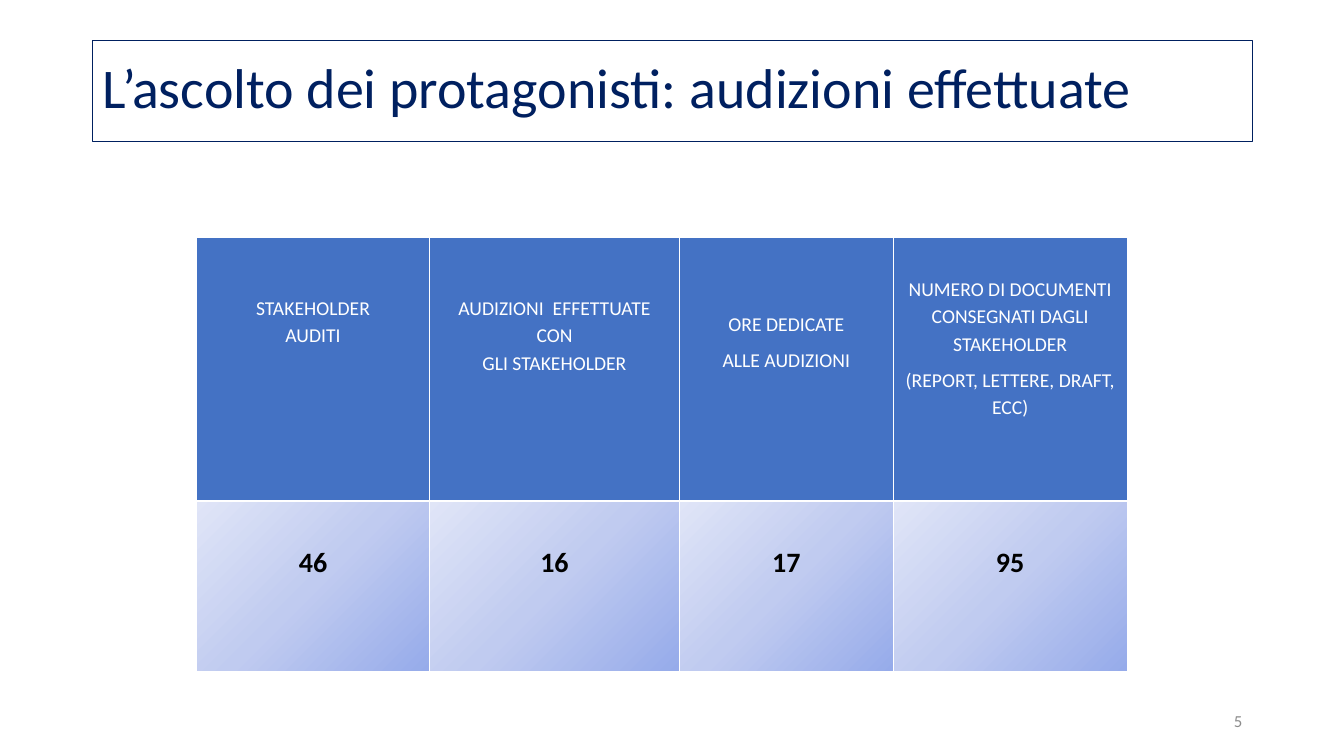
from lxml import etree
from pptx import Presentation
from pptx import util as u
from pptx.dml.color import RGBColor
from pptx.enum import text
from pptx.oxml import parse_xml
from pptx.oxml.ns import nsdecls

W, H = 13.33, 7.5
FONT, NAVY, BLUE, WHITE, GREY = "Calibri", "002060", "4472C4", "FFFFFF", "8C8C8C"
LINE = 1.15

TITLE = "L’ascolto dei protagonisti: audizioni effettuate"
PAGE = "5"
# header lines, space before each paragraph (pt), top inset (in), value, column width (in)
COLUMNS = [
    (["STAKEHOLDER", "AUDITI"], 0, 0.55, "46", 2.31),
    (["AUDIZIONI  EFFETTUATE", "CON", "GLI STAKEHOLDER"], 0, 0.55, "16", 2.48),
    (["ORE DEDICATE", "ALLE AUDIZIONI"], 6, 0.71, "17", 2.12),
    (["NUMERO DI DOCUMENTI CONSEGNATI DAGLI STAKEHOLDER",
      "(REPORT, LETTERE, DRAFT, ECC)"], 6, 0.36, "95", 2.32),
]
ROWS = [2.61, 1.69]
VALUE_INSET = 0.39
TABLE_LEFT, TABLE_TOP = 1.95, 2.36
GRADIENT = [(0, "96ABEA"), (50, "C0CBF0"), (100, "E0E5F7")]


def rgb(value):
    return RGBColor.from_string(value)


def write(tf, lines, size, color, bold=False, align=text.PP_ALIGN.LEFT, spacing=1.0, before=0):
    for i, line in enumerate(lines):
        p = tf.paragraphs[0] if i == 0 else tf.add_paragraph()
        p.alignment, p.line_spacing = align, spacing
        p.space_before = u.Pt(before if i else 0)
        r = p.add_run()
        r.text = line
        r.font.name, r.font.size, r.font.bold = FONT, u.Pt(size), bold
        r.font.color.rgb = rgb(color)


def fill_radial(cell):
    """Gradient that spreads from the bottom right corner."""
    stops = "".join(f'<a:gs pos="{pos * 1000}"><a:srgbClr val="{c}"/></a:gs>'
                    for pos, c in GRADIENT)
    cell._tc.get_or_add_tcPr().append(parse_xml(
        f'<a:gradFill {nsdecls("a")} rotWithShape="1"><a:gsLst>{stops}</a:gsLst>'
        '<a:path path="circle"><a:fillToRect l="100000" t="100000"/></a:path></a:gradFill>'))


def add_borders(cell, color, width):
    for i, side in enumerate("LRTB"):
        ln = parse_xml(
            f'<a:ln{side} {nsdecls("a")} w="{u.Pt(width)}"><a:solidFill>'
            f'<a:srgbClr val="{color}"/></a:solidFill></a:ln{side}>')
        cell._tc.get_or_add_tcPr().insert(i, ln)


def format_cell(cell, lines, inset, **style):
    cell.margin_left = cell.margin_right = u.Inches(0.07)
    cell.margin_top, cell.margin_bottom = u.Inches(inset), 0
    cell.vertical_anchor = text.MSO_ANCHOR.TOP
    write(cell.text_frame, lines, align=text.PP_ALIGN.CENTER, spacing=LINE, **style)
    add_borders(cell, WHITE, 1)


def main():
    prs = Presentation()
    prs.slide_width, prs.slide_height = u.Inches(W), u.Inches(H)
    s = prs.slides.add_slide(prs.slide_layouts[5])

    title = s.shapes.title
    title.left, title.top, title.width, title.height = map(u.Inches, (0.92, 0.4, 11.5, 1))
    title.line.color.rgb, title.line.width = rgb(NAVY), u.Pt(0.75)
    title.text_frame.vertical_anchor = text.MSO_ANCHOR.MIDDLE
    write(title.text_frame, [TITLE], 40, NAVY, spacing=0.9)

    widths = [column[-1] for column in COLUMNS]
    table = s.shapes.add_table(
        len(ROWS), len(COLUMNS), u.Inches(TABLE_LEFT), u.Inches(TABLE_TOP),
        u.Inches(sum(widths)), u.Inches(sum(ROWS))).table
    for row, height in zip(table.rows, ROWS):
        row.height = u.Inches(height)
    for i, (header, before, inset, value, width) in enumerate(COLUMNS):
        table.columns[i].width = u.Inches(width)
        head, body = table.cell(0, i), table.cell(1, i)
        head.fill.solid()
        head.fill.fore_color.rgb = rgb(BLUE)
        format_cell(head, header, inset, size=14, color=WHITE, before=before)
        fill_radial(body)
        format_cell(body, [value], VALUE_INSET, size=20, color="000000", bold=True)

    page = s.shapes.add_textbox(*map(u.Inches, (9.42, 6.95, 3, 0.4)))
    page.text_frame.word_wrap = True
    page.text_frame.vertical_anchor = text.MSO_ANCHOR.MIDDLE
    write(page.text_frame, [PAGE], 12, GREY, align=text.PP_ALIGN.RIGHT)

    prs.save("out.pptx")


if __name__ == "__main__":
    main()
